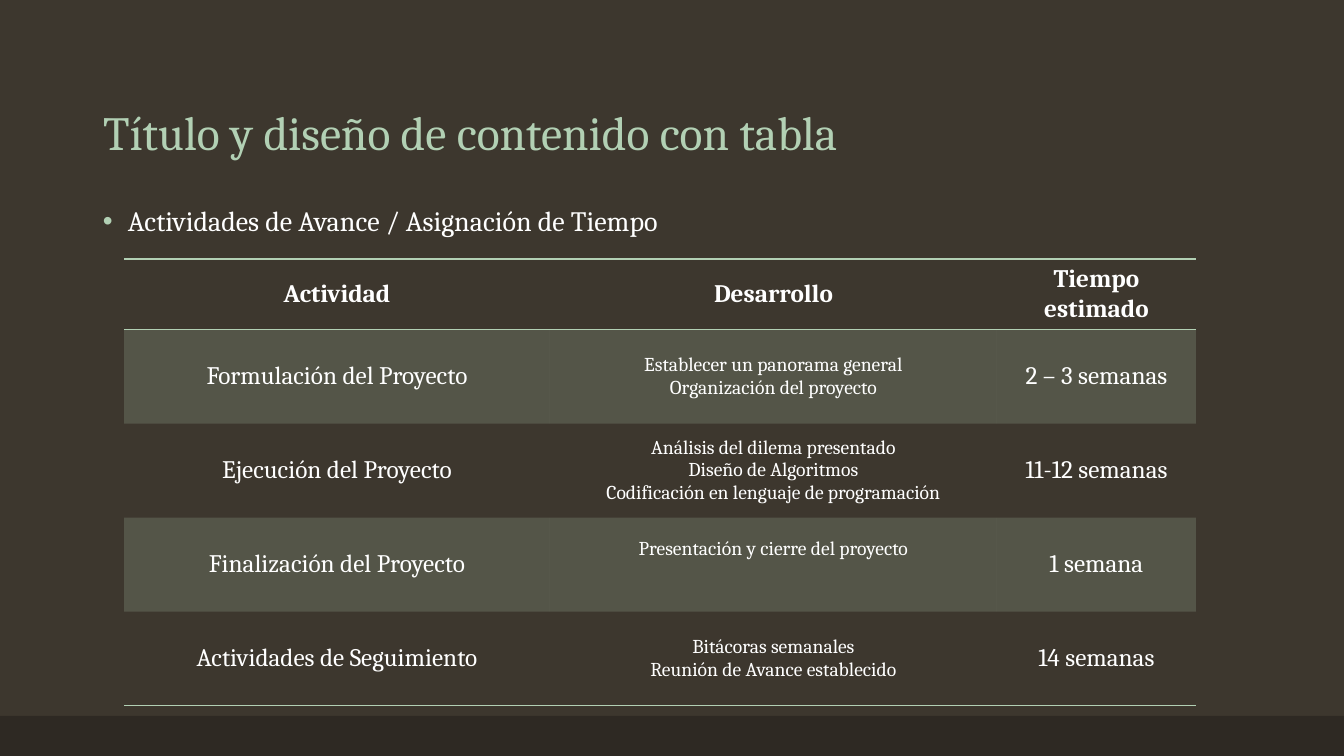
from lxml.etree import SubElement
from pptx import Presentation
from pptx.dml.color import RGBColor
from pptx.enum.shapes import MSO_SHAPE
from pptx.enum.text import MSO_ANCHOR, MSO_AUTO_SIZE, PP_ALIGN
from pptx.oxml.ns import qn
from pptx.util import Pt

EMU_PER_PX = 914400 / 100.8
COLORS = {
    "background": "3D372E",
    "footer": "2E2923",
    "accent": "B2D0B4",
    "text": "FFFFFF",
}
FONT = "Cambria"
PLAIN_TABLE_STYLE = "{2D5ABB26-0587-4C30-8999-92F81FD0307C}"

COLUMN_WIDTHS = [426, 447, 199]
HEADER_HEIGHT, ROW_HEIGHT = 68, 94
ACTIVITY_ROWS = [
    ["Actividad", "Desarrollo", "Tiempo estimado"],
    ["Formulación del Proyecto",
     "Establecer un panorama general\nOrganización del proyecto",
     "2 – 3 semanas"],
    ["Ejecución del Proyecto",
     "Análisis del dilema presentado\nDiseño de Algoritmos\n"
     "Codificación en lenguaje de programación",
     "11-12 semanas"],
    ["Finalización del Proyecto", "Presentación y cierre del proyecto", "1 semana"],
    ["Actividades de Seguimiento",
     "Bitácoras semanales\nReunión de Avance establecido",
     "14 semanas"],
]


def px(length):
    return round(length * EMU_PER_PX)


def rgb(color):
    return RGBColor.from_string(COLORS[color])


class SlideBuilder:
    def __init__(self, deck):
        self.page = deck.slides.add_slide(deck.slide_layouts[5])
        self.page.background.fill.solid()
        self.page.background.fill.fore_color.rgb = rgb("background")

    def set_text(self, para, text, size, color="text", bold=False, align=PP_ALIGN.LEFT):
        para.text = text
        para.alignment = align
        font = para.font
        font.name, font.size, font.bold = FONT, Pt(size), bold
        font.color.rgb = rgb(color)

    def bar(self, left, top, width, height, color):
        bar = self.page.shapes.add_shape(
            MSO_SHAPE.RECTANGLE, *map(px, (left, top, width, height)))
        bar.shadow.inherit = False
        bar.fill.solid()
        bar.fill.fore_color.rgb = rgb(color)
        bar.line.fill.background()

    def title(self, left, top, width, height, text):
        title = self.page.shapes.title
        title.left, title.top, title.width, title.height = map(
            px, (left, top, width, height))
        frame = title.text_frame
        frame.auto_size = MSO_AUTO_SIZE.NONE
        frame.vertical_anchor = MSO_ANCHOR.BOTTOM
        para = frame.paragraphs[0]
        self.set_text(para, text, 34, "accent")
        para.line_spacing = 0.9

    def bullet(self, left, top, width, height, text):
        box = self.page.shapes.add_textbox(*map(px, (left, top, width, height)))
        box.text_frame.word_wrap = True
        para = box.text_frame.paragraphs[0]
        self.set_text(para, text, 20)
        para.line_spacing = 0.9
        properties = para._p.get_or_add_pPr()
        properties.set("marL", str(px(25)))
        properties.set("indent", str(-px(25)))
        default_run = properties.find(qn("a:defRPr"))
        bullet_color = SubElement(properties, qn("a:buClr"))
        SubElement(bullet_color, qn("a:srgbClr"), val=COLORS["accent"])
        SubElement(properties, qn("a:buFont"), typeface="Arial")
        SubElement(properties, qn("a:buChar"), char="•")
        properties.append(default_run)

    def border(self, cell, side):
        """Draw the accent line on one side: lnT for top, lnB for bottom."""
        line = SubElement(cell._tc.get_or_add_tcPr(), qn("a:" + side), w=str(Pt(1)))
        fill = SubElement(line, qn("a:solidFill"))
        SubElement(fill, qn("a:srgbClr"), val=COLORS["accent"])

    def fill_cell(self, cell, opacity):
        cell.fill.solid()
        cell.fill.fore_color.rgb = rgb("accent")
        color = cell._tc.tcPr.find(qn("a:solidFill")).find(qn("a:srgbClr"))
        SubElement(color, qn("a:alpha"), val=str(opacity * 1000))

    def table(self, left, top, rows):
        last = len(rows) - 1
        height = HEADER_HEIGHT + last * ROW_HEIGHT
        frame = self.page.shapes.add_table(
            len(rows), len(COLUMN_WIDTHS),
            *map(px, (left, top, sum(COLUMN_WIDTHS), height)))
        table = frame.table
        table._tbl.tblPr.find(qn("a:tableStyleId")).text = PLAIN_TABLE_STYLE
        for column, width in zip(table.columns, COLUMN_WIDTHS):
            column.width = px(width)
        for i, texts in enumerate(rows):
            table.rows[i].height = px(ROW_HEIGHT if i else HEADER_HEIGHT)
            for j, text in enumerate(texts):
                cell = table.cell(i, j)
                cell.vertical_anchor = MSO_ANCHOR.MIDDLE
                self.set_text(cell.text_frame.paragraphs[0], text,
                              14 if i and j == 1 else 18,
                              bold=i == 0, align=PP_ALIGN.CENTER)
                if i == 0:
                    self.border(cell, "lnT")
                if i in (0, last):
                    self.border(cell, "lnB")
                if i % 2:
                    self.fill_cell(cell, 20)
                else:
                    cell.fill.background()
        return table


def main():
    deck = Presentation()
    deck.slide_width, deck.slide_height = px(1344), px(756)
    slide = SlideBuilder(deck)
    slide.bar(0, 716, 1344, 40, "footer")
    slide.title(93, 40, 1159, 126, "Título y diseño de contenido con tabla")
    slide.bullet(93, 202, 1119, 480, "Actividades de Avance / Asignación de Tiempo")
    table = slide.table(124, 259, ACTIVITY_ROWS)
    table.cell(3, 1).margin_bottom = px(35)
    deck.save("out.pptx")


if __name__ == "__main__":
    main()
